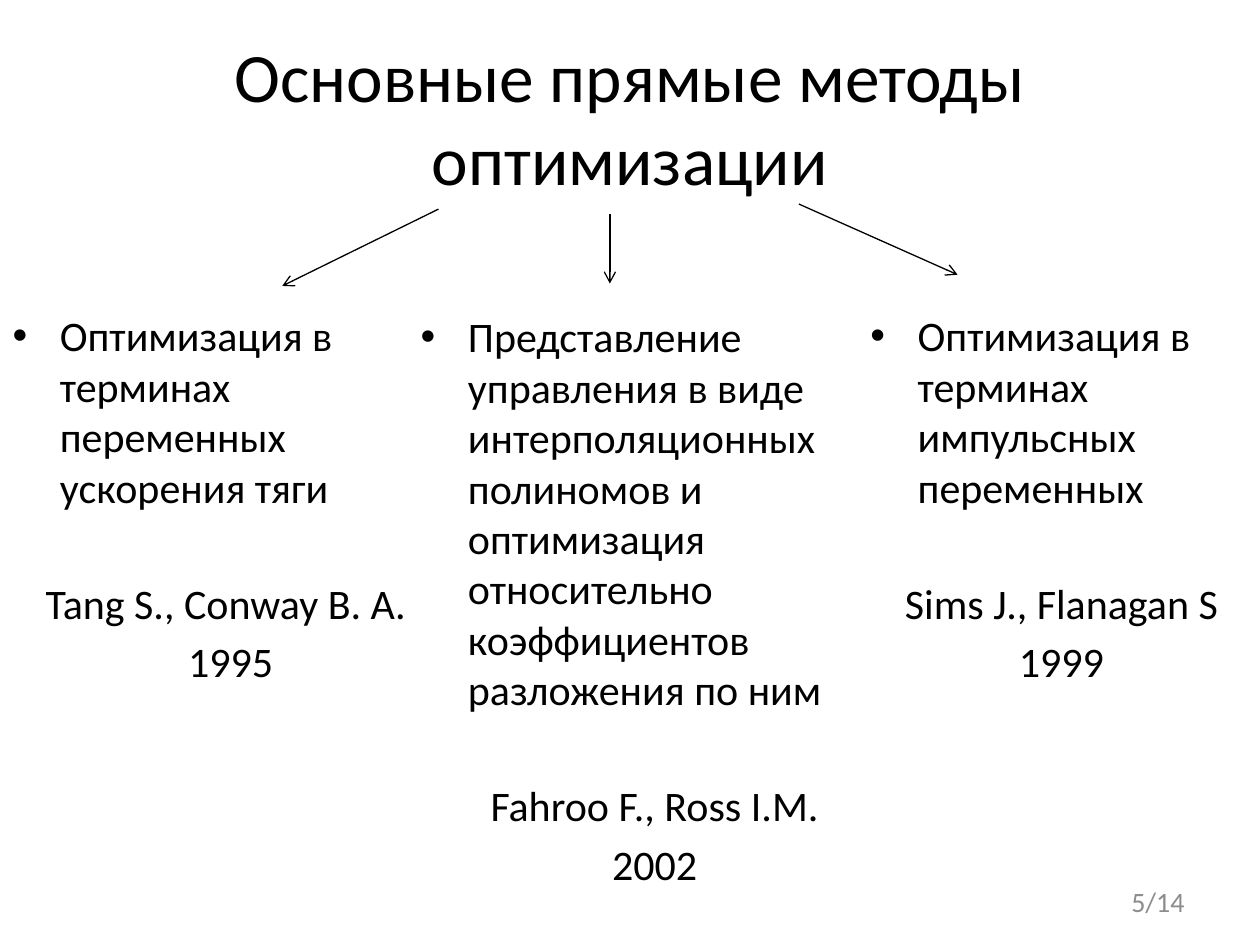
"""Build a slide that shows three direct optimisation methods with their authors."""
from typing import NamedTuple

from lxml.etree import SubElement
from pptx import Presentation
from pptx.dml.color import RGBColor
from pptx.enum.shapes import MSO_CONNECTOR as Connector
from pptx.enum.text import MSO_ANCHOR as Anchor, MSO_AUTO_SIZE as AutoSize, PP_ALIGN as Align
from pptx.oxml.ns import qn
from pptx.util import Pt

BLACK = RGBColor(0x00, 0x00, 0x00)
GREY = RGBColor(0x8C, 0x8C, 0x8C)
FONT = "Calibri"
BODY_SIZE = 24
HANGING = 27
LINE_GAP = 4.5
AUTHOR_GAP = 37.5


class Area(NamedTuple):
    left: float
    top: float
    width: float
    height: float


class Method(NamedTuple):
    area: Area
    description: str
    authors: str
    year: str


class Arrow(NamedTuple):
    start: tuple[float, float]
    end: tuple[float, float]


TITLE_AREA = Area(36, 21.6, 648, 90)
NUMBER_AREA = Area(516, 500.5, 168, 28.75)
METHODS = [
    Method(Area(0, 173.5, 263.5, 342.7),
           "Оптимизация в терминах переменных ускорения тяги",
           "Tang S., Conway B. A. ", "1995"),
    Method(Area(490.3, 173.5, 232.6, 342.7),
           "Оптимизация в терминах импульсных переменных",
           "Sims J., Flanagan S", "1999"),
    Method(Area(233.3, 174.2, 281.5, 342.7),
           "Представление управления в виде интерполяционных полиномов "
           "и оптимизация относительно коэффициентов разложения по ним",
           "Fahroo F., Ross I.M.", "2002"),
]
ARROWS = [
    Arrow((348.5, 122.4), (348.5, 162)),
    Arrow((456.5, 116.6), (547.2, 157)),
    Arrow((250.6, 119.5), (161.3, 163.4)),
]


def place(box, area: Area, anchor: Anchor) -> None:
    """Move a box to its area and fix how its text sits."""
    box.left, box.top, box.width, box.height = (Pt(length) for length in area)
    frame = box.text_frame
    frame.auto_size = AutoSize.NONE
    frame.word_wrap = True
    frame.vertical_anchor = anchor


def format_para(para, size: float, color: RGBColor, align: Align) -> None:
    """Align a paragraph and set the font of its runs."""
    para.alignment = align
    for span in para.runs:
        span.font.name = FONT
        span.font.size = Pt(size)
        span.font.color.rgb = color


def set_bullet(para, bulleted: bool) -> None:
    """Give a paragraph a hanging indent, with or without a bullet."""
    properties = para._p.get_or_add_pPr()
    properties.set("marL", str(Pt(HANGING)))
    properties.set("indent", str(Pt(-HANGING)))
    if bulleted:
        SubElement(properties, qn("a:buFont"), typeface="Arial")
        SubElement(properties, qn("a:buChar"), char="•")
    else:
        SubElement(properties, qn("a:buNone"))


def fill_method(box, method: Method) -> None:
    """Write one method, its authors and its year into a box."""
    place(box, method.area, Anchor.TOP)
    frame = box.text_frame
    frame.text = "\n".join([method.description, method.authors, method.year])
    gaps = [LINE_GAP, AUTHOR_GAP, LINE_GAP]
    for index, (para, gap) in enumerate(zip(frame.paragraphs, gaps)):
        format_para(para, BODY_SIZE, BLACK, Align.CENTER if index else Align.LEFT)
        para.space_before = Pt(gap)
        set_bullet(para, bulleted=index == 0)


def draw_arrow(slide, arrow: Arrow) -> None:
    """Draw a thin line with an open arrowhead at its end."""
    points = [Pt(length) for length in arrow.start + arrow.end]
    line = slide.shapes.add_connector(Connector.STRAIGHT, *points)
    line.line.color.rgb = BLACK
    line.line.width = Pt(0.75)
    SubElement(line.line._get_or_add_ln(), qn("a:tailEnd"), type="arrow")
    SubElement(line._element.spPr, qn("a:effectLst"))


def add_label(slide, area: Area, text: str) -> None:
    """Add the grey page number."""
    box = slide.shapes.add_textbox(0, 0, 0, 0)
    place(box, area, Anchor.MIDDLE)
    box.text_frame.text = text
    format_para(box.text_frame.paragraphs[0], 16, GREY, Align.RIGHT)


def main() -> None:
    """Build and save the deck."""
    deck = Presentation()
    deck.slide_width, deck.slide_height = Pt(720), Pt(540)
    slide = deck.slides.add_slide(deck.slide_layouts[1])

    title = slide.shapes.title
    place(title, TITLE_AREA, Anchor.MIDDLE)
    title.text_frame.text = "Основные прямые методы оптимизации"
    format_para(title.text_frame.paragraphs[0], 39.6, BLACK, Align.CENTER)

    first, *others = METHODS
    fill_method(slide.placeholders[1], first)
    for method in others:
        fill_method(slide.shapes.add_textbox(0, 0, 0, 0), method)
    for arrow in ARROWS:
        draw_arrow(slide, arrow)
    add_label(slide, NUMBER_AREA, "5/14")

    deck.save("out.pptx")


if __name__ == "__main__":
    main()
